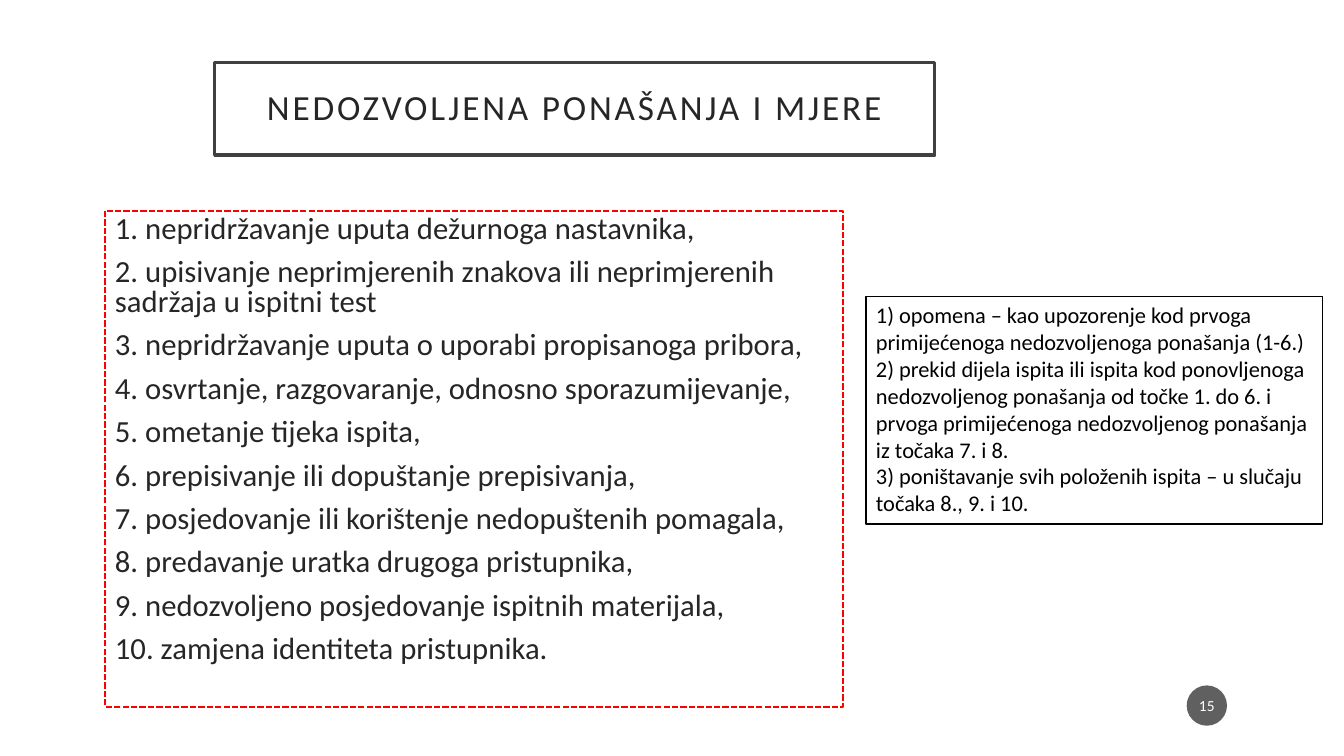
from dataclasses import dataclass

from lxml.etree import SubElement
from pptx import Presentation
from pptx.dml.color import RGBColor
from pptx.enum.dml import MSO_LINE
from pptx.enum.shapes import MSO_SHAPE
from pptx.enum.text import MSO_ANCHOR, MSO_AUTO_SIZE, PP_ALIGN
from pptx.oxml.ns import qn
from pptx.util import Pt

TITLE = "NEDOZVOLJENA PONAŠANJA I MJERE"
BEHAVIOURS = [
    "1. nepridržavanje uputa dežurnoga nastavnika,",
    "2. upisivanje neprimjerenih znakova ili neprimjerenih sadržaja u ispitni test",
    "3. nepridržavanje uputa o uporabi propisanoga pribora,",
    "4. osvrtanje, razgovaranje, odnosno sporazumijevanje,",
    "5. ometanje tijeka ispita,",
    "6. prepisivanje ili dopuštanje prepisivanja,",
    "7. posjedovanje ili korištenje nedopuštenih pomagala,",
    "8. predavanje uratka drugoga pristupnika,",
    "9. nedozvoljeno posjedovanje ispitnih materijala,",
    "10. zamjena identiteta pristupnika.",
]
MEASURES = [
    "1) opomena – kao upozorenje kod prvoga primijećenoga nedozvoljenoga ponašanja (1-6.)",
    "2) prekid dijela ispita ili ispita kod ponovljenoga nedozvoljenog ponašanja "
    "od točke 1. do 6. i prvoga primijećenoga nedozvoljenog ponašanja iz točaka 7. i 8.",
    "3) poništavanje svih položenih ispita – u slučaju točaka 8., 9. i 10.",
]
PAGE_NUMBER = "15"

PX = 9144  # 100 px to the inch
PAGE_SIZE = (1333, 750)
TITLE_AREA = (213, 62, 714, 92)
BEHAVIOURS_AREA = (104, 209, 732, 492)
MEASURES_AREA = (859, 294, 453, 226)
BADGE_AREA = (1177, 680, 40, 40)


@dataclass(frozen=True)
class Theme:
    font: str = "Calibri"
    ink: str = "262626"
    frame: str = "404040"
    alert: str = "FF0000"
    black: str = "000000"
    white: str = "FFFFFF"
    badge: str = "1D1D1D"
    title_size: float = 25.2
    body_size: float = 21.9
    measure_size: float = 16
    badge_size: float = 11


THEME = Theme()


def place(box, area):
    box.left, box.top, box.width, box.height = (length * PX for length in area)


def paint(fill, color):
    fill.solid()
    fill.fore_color.rgb = RGBColor.from_string(color)


def outline(box, color, width):
    paint(box.line.fill, color)
    box.line.width = Pt(width)


def write(box, lines, size, color, anchor=MSO_ANCHOR.TOP, align=PP_ALIGN.LEFT,
          margins=(10, 5, 10, 5)):
    """Fill the box with one paragraph per line and return the paragraphs."""
    frame = box.text_frame
    frame.text = "\n".join(lines)
    frame.word_wrap = True
    frame.auto_size = MSO_AUTO_SIZE.NONE
    frame.vertical_anchor = anchor
    (frame.margin_left, frame.margin_top,
     frame.margin_right, frame.margin_bottom) = (margin * PX for margin in margins)
    for para in frame.paragraphs:
        para.alignment = align
        for span in para.runs:
            span.font.name = THEME.font
            span.font.size = Pt(size)
            span.font.color.rgb = RGBColor.from_string(color)
    return frame.paragraphs


def add_title(page):
    box = page.shapes.title
    place(box, TITLE_AREA)
    paint(box.fill, THEME.white)
    outline(box, THEME.frame, 2.5)
    para = write(box, [TITLE], THEME.title_size, THEME.ink,
                 MSO_ANCHOR.MIDDLE, PP_ALIGN.CENTER, (20, 20, 20, 20))[0]
    para.line_spacing = 0.9
    para.runs[0].font._element.set("spc", "200")


def add_behaviours(page):
    box = page.placeholders[1]
    place(box, BEHAVIOURS_AREA)
    outline(box, THEME.alert, 1.5)
    box.line.dash_style = MSO_LINE.SQUARE_DOT
    for para in write(box, BEHAVIOURS, THEME.body_size, THEME.ink):
        para.line_spacing = 0.8
        para.space_before = Pt(10)
        properties = para._p.get_or_add_pPr()
        properties.set("marL", "0")
        properties.set("indent", "0")
        SubElement(properties, qn("a:buNone"))


def add_measures(page):
    box = page.shapes.add_textbox(0, 0, 0, 0)
    place(box, MEASURES_AREA)
    outline(box, THEME.black, 1)
    write(box, MEASURES, THEME.measure_size, THEME.black)
    box.text_frame.auto_size = MSO_AUTO_SIZE.SHAPE_TO_FIT_TEXT


def add_badge(page):
    box = page.shapes.add_shape(MSO_SHAPE.OVAL, 0, 0, 0, 0)
    place(box, BADGE_AREA)
    box.shadow.inherit = False
    paint(box.fill, THEME.badge)
    color = box._element.spPr.find(qn("a:solidFill"))[0]
    SubElement(color, qn("a:alpha")).set("val", "70000")
    box.line.fill.background()
    write(box, [PAGE_NUMBER], THEME.badge_size, THEME.white,
          MSO_ANCHOR.MIDDLE, PP_ALIGN.CENTER, (2, 5, 2, 5))


def main():
    deck = Presentation()
    deck.slide_width, deck.slide_height = (length * PX for length in PAGE_SIZE)
    page = deck.slides.add_slide(deck.slide_layouts[1])
    add_title(page)
    add_behaviours(page)
    add_measures(page)
    add_badge(page)
    deck.save("out.pptx")


if __name__ == "__main__":
    main()
